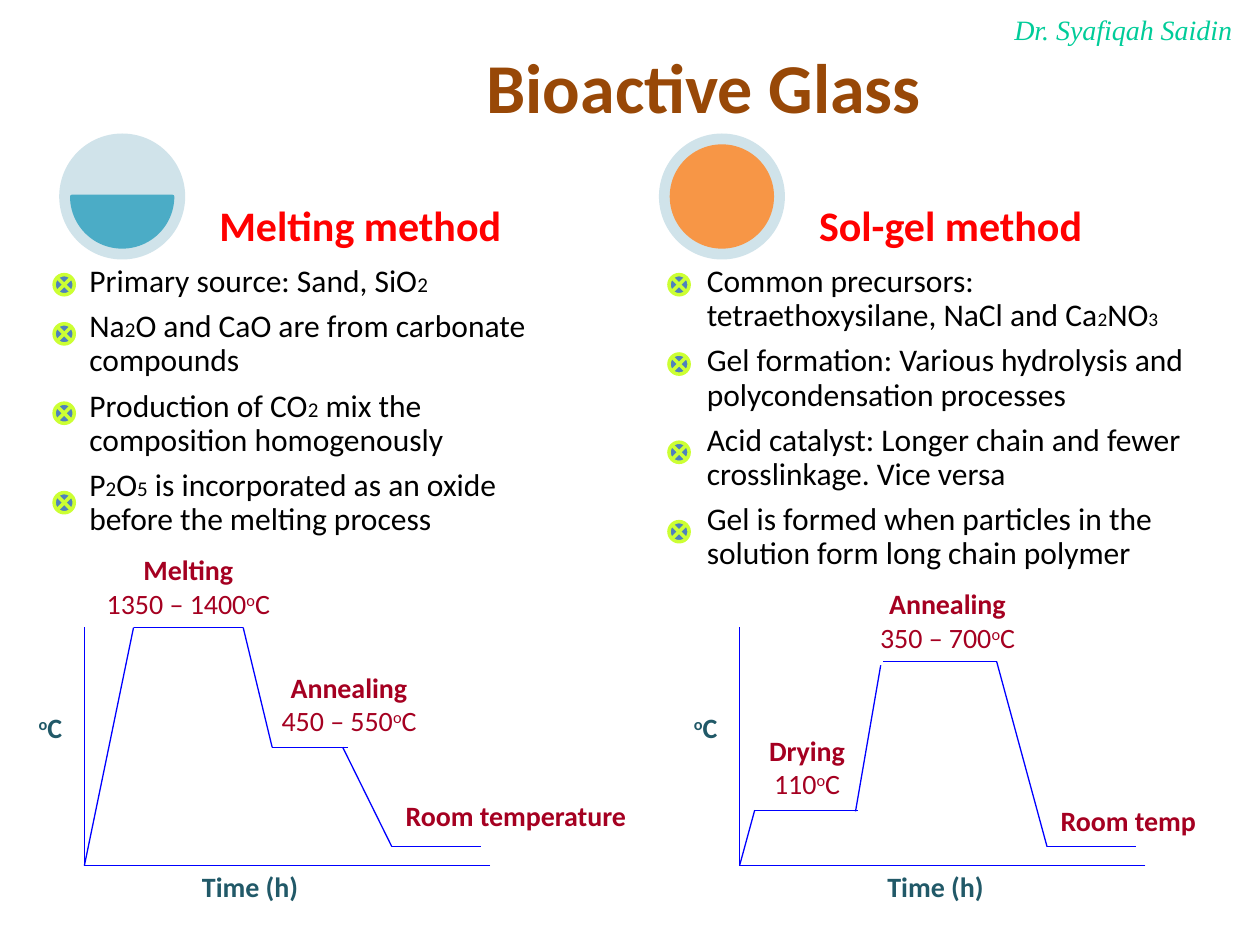
from lxml import etree
from pptx import Presentation
from pptx.dml.color import RGBColor
from pptx.enum.shapes import MSO_CONNECTOR, MSO_SHAPE
from pptx.enum.text import MSO_ANCHOR, MSO_AUTO_SIZE, PP_ALIGN
from pptx.oxml.ns import qn
from pptx.util import Inches, Pt

BLACK = RGBColor(0x00, 0x00, 0x00)
RED = RGBColor(0xFF, 0x00, 0x00)
BROWN = RGBColor(0x98, 0x48, 0x07)
GREEN = RGBColor(0x00, 0xCC, 0x99)
PALE_BLUE = RGBColor(0xD0, 0xE3, 0xEA)
TEAL = RGBColor(0x4B, 0xAC, 0xC6)
ORANGE = RGBColor(0xF7, 0x96, 0x46)
LIME = RGBColor(0xCC, 0xFF, 0x33)
MARKER_BLUE = RGBColor(0x4F, 0x81, 0xBD)
CURVE_BLUE = RGBColor(0x00, 0x00, 0xFF)
CRIMSON = RGBColor(0xA5, 0x00, 0x21)
AXIS_TEAL = RGBColor(0x21, 0x59, 0x68)

METHODS = [
    {
        "heading": "Melting method", "icon_left": 0.47, "heading_width": 2.95,
        "icon_color": TEAL, "chord": (0, 108),
        "list_left": 0.66, "list_width": 3.75, "index_size": 12,
        "points": [
            "Primary source: Sand, SiO|2",
            "Na|2|O and CaO are from carbonate compounds",
            "Production of CO|2| mix the composition homogenously",
            "P|2|O|5| is incorporated as an oxide before the melting process",
        ],
        "marker_left": 0.43, "marker_tops": [2.18, 2.57, 3.2, 3.91],
        "axis_left": 0.67, "time_left": 1.5,
        "curve": [
            (0.67, 6.87, 1.06, 4.98), (1.06, 4.98, 1.93, 4.98),
            (1.93, 4.98, 2.16, 5.93), (2.16, 5.93, 2.76, 5.93),
            (2.72, 5.93, 3.11, 6.72), (3.11, 6.72, 3.82, 6.72),
        ],
        "stages": [
            (0.71, 4.34, 1.57, 0.64, ["Melting", "1350 – 1400|o|C"]),
            (2.12, 5.27, 1.3, 0.64, ["Annealing", "450 – 550|o|C"]),
            (3.11, 6.29, 1.97, 0.37, ["Room temperature"]),
        ],
    },
    {
        "heading": "Sol-gel method", "icon_left": 5.23, "heading_width": 2.95,
        "icon_color": ORANGE, "chord": (162, 162),
        "list_left": 5.56, "list_width": 3.96, "index_size": 11,
        "points": [
            "Common precursors: tetraethoxysilane, NaCl and Ca|2|NO|3",
            "Gel formation: Various hydrolysis and polycondensation processes",
            "Acid catalyst: Longer chain and fewer crosslinkage. Vice versa",
            "Gel is formed when particles in the solution form long chain polymer",
        ],
        "marker_left": 5.31, "marker_tops": [2.18, 2.81, 3.51, 4.14],
        "axis_left": 5.87, "time_left": 6.94,
        "curve": [
            (5.87, 6.87, 5.99, 6.43), (5.99, 6.43, 6.81, 6.43),
            (6.99, 5.28, 6.79, 6.44), (7.01, 5.25, 7.91, 5.25),
            (7.91, 5.25, 8.31, 6.72), (8.31, 6.72, 9.02, 6.72),
        ],
        "stages": [
            (6, 5.77, 0.81, 0.64, ["Drying", "110|o|C"]),
            (6.87, 4.61, 1.3, 0.64, ["Annealing", "350 – 700|o|C"]),
            (8.31, 6.33, 1.29, 0.37, ["Room temp"]),
        ],
    },
]


def add_text(left, top, width, height, lines, color, size=16, bold=True,
             index_size=None, inset=None):
    """Add a text box; every second part between bars is an index.

    The index is superscript unless index_size is given. With an inset the
    box wraps and is left aligned, otherwise it is a centred label whose
    first line alone is bold.
    """
    box = slide.shapes.add_textbox(
        Inches(left), Inches(top), Inches(width), Inches(height))
    frame = box.text_frame
    frame.word_wrap = inset is not None
    if inset is None:
        frame.auto_size = MSO_AUTO_SIZE.SHAPE_TO_FIT_TEXT
    else:
        frame.margin_left = frame.margin_right = Inches(inset)
        frame.margin_top = frame.margin_bottom = Inches(inset)
    for number, line in enumerate(lines):
        paragraph = frame.add_paragraph() if number else frame.paragraphs[0]
        if inset is None:
            paragraph.alignment = PP_ALIGN.CENTER
        else:
            paragraph.line_spacing = 0.9
            if len(lines) > 1:
                paragraph.space_after = Pt(6.3)
        paragraph.font.name = "Calibri"
        paragraph.font.size = Pt(size)
        paragraph.font.bold = bold and number == 0
        paragraph.font.color.rgb = color
        for position, part in enumerate(line.split("|")):
            if not part:
                continue
            run = paragraph.add_run()
            run.text = part
            if position % 2 and index_size:
                run.font.size = Pt(index_size)
            elif position % 2:
                run.font._element.set("baseline", "30000")
    return box


def add_shape(preset, left, top, size, fill, line=None):
    shape = slide.shapes.add_shape(
        preset, Inches(left), Inches(top), Inches(size), Inches(size))
    shape.shadow.inherit = False
    shape.fill.solid()
    shape.fill.fore_color.rgb = fill
    if line is None:
        shape.line.fill.background()
    else:
        shape.line.color.rgb = line
        shape.line.width = Pt(2)
    return shape


prs = Presentation()
prs.slide_width, prs.slide_height = Inches(10), Inches(7.5)
slide = prs.slides.add_slide(prs.slide_layouts[5])

title = slide.shapes.title
title.left, title.top = Inches(3.74), Inches(0.29)
title.width, title.height = Inches(3.69), Inches(0.77)
title.text_frame.text = "Bioactive Glass"
title.text_frame.word_wrap = False
title_font = title.text_frame.paragraphs[0].font
title_font.name = "Calibri"
title_font.size = Pt(40)
title_font.bold = True
title_font.color.rgb = BROWN

author = add_text(7.91, 0.05, 2.01, 0.37, ["Dr. Syafiqah Saidin"], GREEN, bold=False)
author_font = author.text_frame.paragraphs[0].font
author_font.name = "Times New Roman"
author_font.italic = True

for method in METHODS:
    icon_left = method["icon_left"]
    add_shape(MSO_SHAPE.OVAL, icon_left, 1.06, 1, PALE_BLUE)
    chord = add_shape(MSO_SHAPE.CHORD, icon_left + 0.1, 1.16, 0.8,
                      method["icon_color"], method["icon_color"])
    chord.adjustments[0], chord.adjustments[1] = method["chord"]

    add_text(method["list_left"], 2.06, method["list_width"], 4.2, method["points"],
             BLACK, size=18, bold=False, index_size=method["index_size"], inset=0.05)
    heading = add_text(icon_left + 1.2, 1.06, method["heading_width"], 1,
                       [method["heading"]], RED, size=24, inset=0.07)
    heading.text_frame.vertical_anchor = MSO_ANCHOR.BOTTOM
    for marker_top in method["marker_tops"]:
        add_shape(MSO_SHAPE.FLOWCHART_SUMMING_JUNCTION, method["marker_left"],
                  marker_top, 0.16, MARKER_BLUE, LIME)

    axis_left = method["axis_left"]
    axes = [(axis_left, 4.98, axis_left, 6.87),
            (axis_left + 3.22, 6.87, axis_left, 6.87)]
    for x1, y1, x2, y2 in axes + method["curve"]:
        segment = slide.shapes.add_connector(
            MSO_CONNECTOR.STRAIGHT, Inches(x1), Inches(y1), Inches(x2), Inches(y2))
        segment.line.color.rgb = CURVE_BLUE
        segment.line.width = Pt(0.75)
        etree.SubElement(segment._element.spPr, qn("a:effectLst"))

    for left, top, width, height, lines in method["stages"]:
        add_text(left, top, width, height, lines, CRIMSON)
    add_text(method["time_left"], 6.85, 0.97, 0.37, ["Time (h)"], AXIS_TEAL)
    add_text(axis_left - 0.47, 5.59, 0.4, 0.37, ["|o|C"], AXIS_TEAL)

prs.save("out.pptx")
